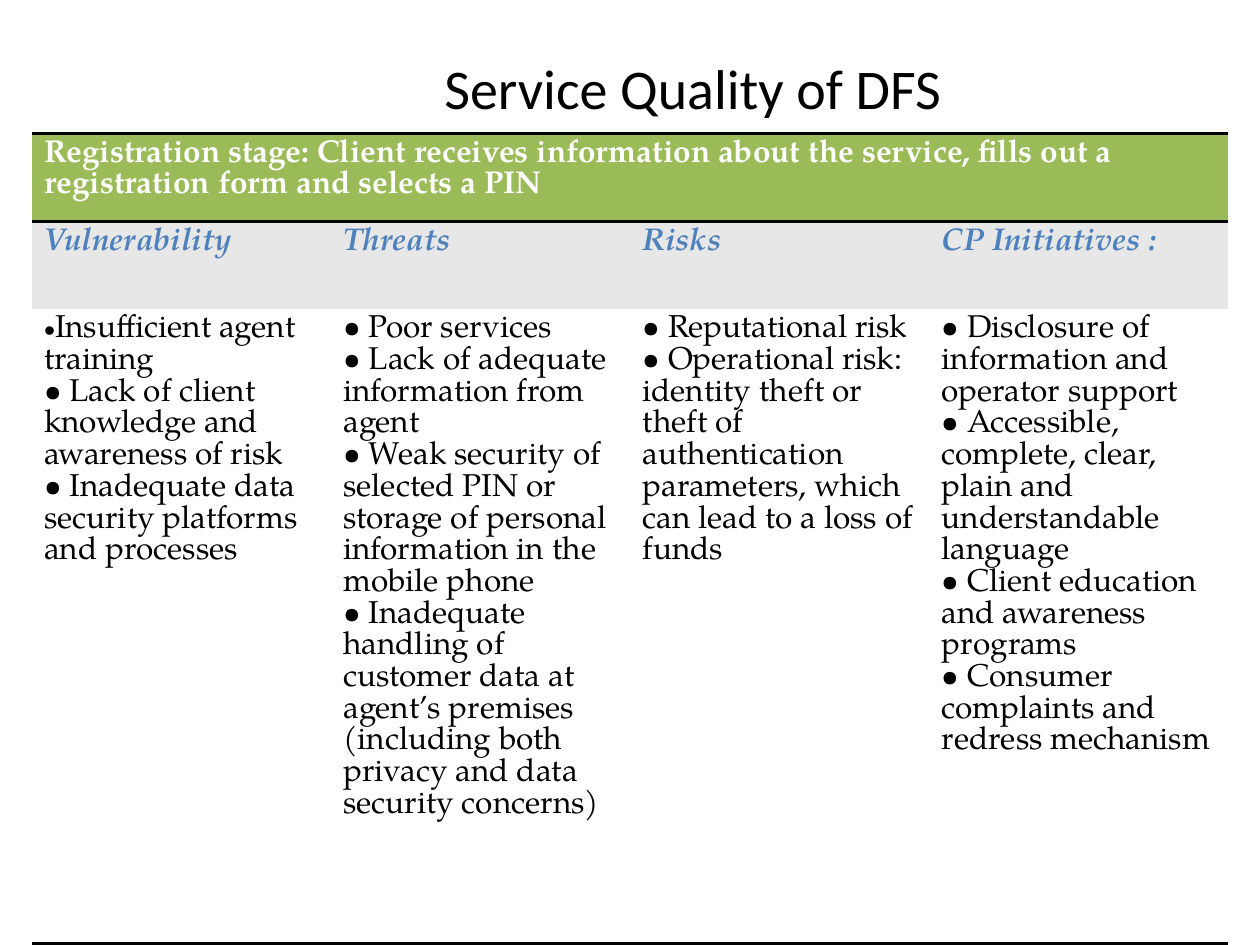
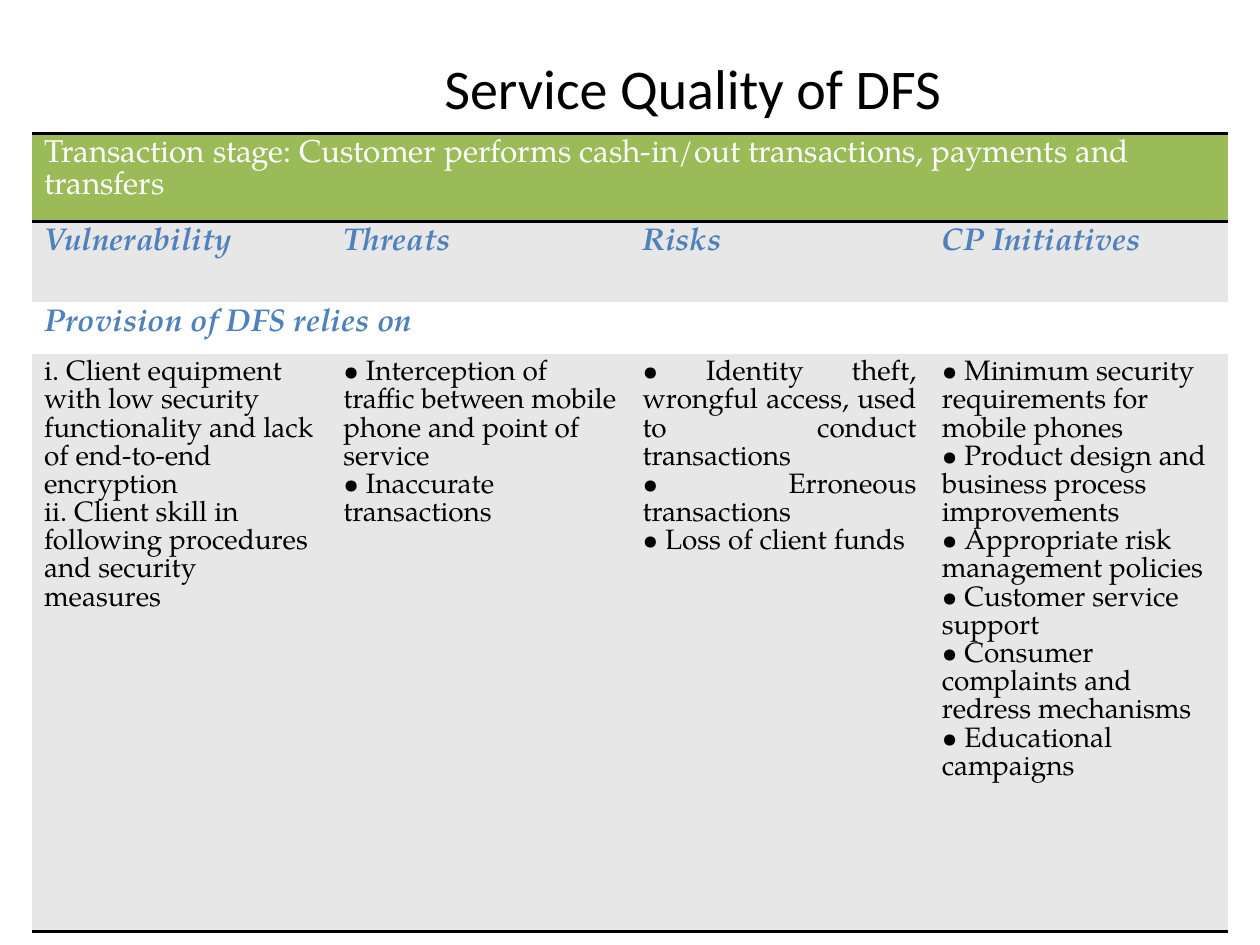
"""Build two slides on the service quality of digital financial services."""
from dataclasses import dataclass

from lxml.etree import SubElement
from pptx import Presentation
from pptx.dml.color import RGBColor
from pptx.enum.text import MSO_ANCHOR, PP_ALIGN
from pptx.oxml.ns import qn
from pptx.util import Inches, Pt


@dataclass(frozen=True)
class Theme:
    """Colours, fonts and type sizes shared by the slides."""
    ink: str = "000000"
    paper: str = "FFFFFF"
    stage: str = "9BBB59"
    heading: str = "4F81BD"
    bands: tuple = ("E7E7E7", "FFFFFF")
    title_font: str = "Calibri"
    table_font: str = "TeX Gyre Pagella"
    title_size: int = 32
    heading_size: int = 18
    rule_width: int = 2
    plain_table: str = "{2D5ABB26-0587-4C30-8999-92F81FD0307C}"


THEME = Theme()
COLUMNS = 4
TABLE_WIDTH = 9.5

REGISTRATION = {
    "stage": "Registration stage: Client receives information about the service, "
             "fills out a registration form and selects a PIN",
    "stage_bold": True,
    "headings": ["Vulnerability", "Threats", "Risks", "CP Initiatives :"],
    "subheading": None,
    "heights": [0.69, 0.69, 5.04],
    "body_size": 18,
    "native_bullet": True,
    "justified_columns": (),
    "body": [
        ["Insufficient agent training",
         "• Lack of client knowledge and awareness of risk",
         "• Inadequate data security platforms and processes"],
        ["• Poor services",
         "• Lack of adequate information from agent",
         "• Weak security of selected PIN or storage of personal information "
         "in the mobile phone",
         "• Inadequate handling of customer data at agent’s premises "
         "(including both privacy and data security concerns)"],
        ["• Reputational risk",
         "• Operational risk: identity theft or theft of authentication "
         "parameters, which can lead to a loss of funds"],
        ["• Disclosure of information and operator support",
         "• Accessible, complete, clear, plain and understandable language",
         "• Client education and awareness programs",
         "• Consumer complaints and redress mechanism"],
    ],
}

TRANSACTION = {
    "stage": "Transaction stage: Customer performs cash-in/out transactions, "
             "payments and transfers",
    "stage_bold": False,
    "headings": ["Vulnerability", "Threats", "Risks", "CP Initiatives"],
    "subheading": "Provision of DFS relies on",
    "heights": [0.64, 0.64, 0.41, 4.58],
    "body_size": 16,
    "native_bullet": False,
    "justified_columns": (2,),
    "body": [
        ["i. Client equipment with low security functionality and lack of "
         "end-to-end encryption",
         "ii. Client skill in following procedures and security measures"],
        ["• Interception of traffic between mobile phone and point of service",
         "• Inaccurate transactions"],
        ["• Identity theft, wrongful access, used to conduct transactions",
         "• Erroneous transactions",
         "• Loss of client funds"],
        ["• Minimum security requirements for mobile phones",
         "• Product design and business process improvements",
         "• Appropriate risk management policies",
         "• Customer service support",
         "• Consumer complaints and redress mechanisms",
         "• Educational campaigns"],
    ],
}


def write_paragraphs(frame, lines, color, align=PP_ALIGN.LEFT, **font_values):
    """Fill a text frame with one paragraph per line."""
    for index, line in enumerate(lines):
        para = frame.paragraphs[0] if index == 0 else frame.add_paragraph()
        para.alignment = align
        span = para.add_run()
        span.text = line
        for name, value in font_values.items():
            setattr(span.font, name, value)
        span.font.color.rgb = RGBColor.from_string(color)


def add_bullet(para):
    """Give a paragraph a round bullet without a hanging indent."""
    properties = para._p.get_or_add_pPr()
    properties.set("marL", "0")
    properties.set("indent", "0")
    SubElement(properties, qn("a:buFont"), typeface="Arial")
    SubElement(properties, qn("a:buChar"), char="•")


def add_title(page, text):
    """Add the slide title, centred right of a one-inch indent."""
    box = page.shapes.add_textbox(Inches(0.5), Inches(0.3), Inches(9), Inches(0.78))
    frame = box.text_frame
    frame_values = {"word_wrap": True, "vertical_anchor": MSO_ANCHOR.MIDDLE,
                    "margin_left": Inches(1.1)}
    for name, value in frame_values.items():
        setattr(frame, name, value)
    write_paragraphs(frame, [text], THEME.ink, PP_ALIGN.CENTER,
                     name=THEME.title_font, size=Pt(THEME.title_size))


def style_row(row, fill, rules=()):
    """Fill a row and draw black rules on the named edges."""
    for cell in row.cells:
        properties = cell._tc.get_or_add_tcPr()
        for edge in rules:
            line = SubElement(properties, qn(f"a:{edge}"),
                              w=str(Pt(THEME.rule_width)))
            solid = SubElement(line, qn("a:solidFill"))
            SubElement(solid, qn("a:srgbClr"), val=THEME.ink)
        cell.fill.solid()
        cell.fill.fore_color.rgb = RGBColor.from_string(fill)


def add_plain_table(page, heights):
    """Add an unstyled table of equal columns."""
    shape = page.shapes.add_table(len(heights), COLUMNS, Inches(0.25), Inches(1.06),
                                  Inches(TABLE_WIDTH), Inches(sum(heights)))
    table = shape.table
    table.first_row = table.horz_banding = False
    table._tbl.tblPr.find(qn("a:tableStyleId")).text = THEME.plain_table
    for column in table.columns:
        column.width = Inches(TABLE_WIDTH / COLUMNS)
    for row, height in zip(table.rows, heights):
        row.height = Inches(height)
    return table


def write_spanning_row(table, index, text, color, **values):
    """Merge a whole row and write one line in it."""
    first = table.cell(index, 0)
    first.merge(table.cell(index, COLUMNS - 1))
    write_paragraphs(first.text_frame, [text], color, **values)


def add_stage_table(page, content):
    """Add the table of vulnerabilities, threats, risks and initiatives."""
    table = add_plain_table(page, content["heights"])
    last = len(content["heights"]) - 1
    base = {"name": THEME.table_font, "size": Pt(THEME.heading_size)}
    heading = {**base, "bold": True, "italic": True, "align": PP_ALIGN.JUSTIFY}

    style_row(table.rows[0], THEME.stage, ("lnT", "lnB"))
    for index in range(1, last + 1):
        fill = THEME.bands[(index - 1) % len(THEME.bands)]
        style_row(table.rows[index], fill, ("lnB",) if index == last else ())

    write_spanning_row(table, 0, content["stage"], THEME.paper,
                       bold=content["stage_bold"], **base)
    if content["subheading"]:
        write_spanning_row(table, 2, content["subheading"], THEME.heading, **heading)

    for column, (label, lines) in enumerate(zip(content["headings"], content["body"])):
        write_paragraphs(table.cell(1, column).text_frame, [label],
                         THEME.heading, **heading)
        justified = column in content["justified_columns"]
        write_paragraphs(table.cell(last, column).text_frame, lines, THEME.ink,
                         PP_ALIGN.JUSTIFY if justified else PP_ALIGN.LEFT,
                         name=THEME.table_font, size=Pt(content["body_size"]))
    if content["native_bullet"]:
        add_bullet(table.cell(last, 0).text_frame.paragraphs[0])


def main():
    """Build and save the deck."""
    deck = Presentation()
    deck.slide_width, deck.slide_height = Inches(10), Inches(7.5)
    for content in (REGISTRATION, TRANSACTION):
        page = deck.slides.add_slide(deck.slide_layouts[6])
        add_title(page, "Service Quality of DFS")
        add_stage_table(page, content)
    deck.save("out.pptx")


if __name__ == "__main__":
    main()
